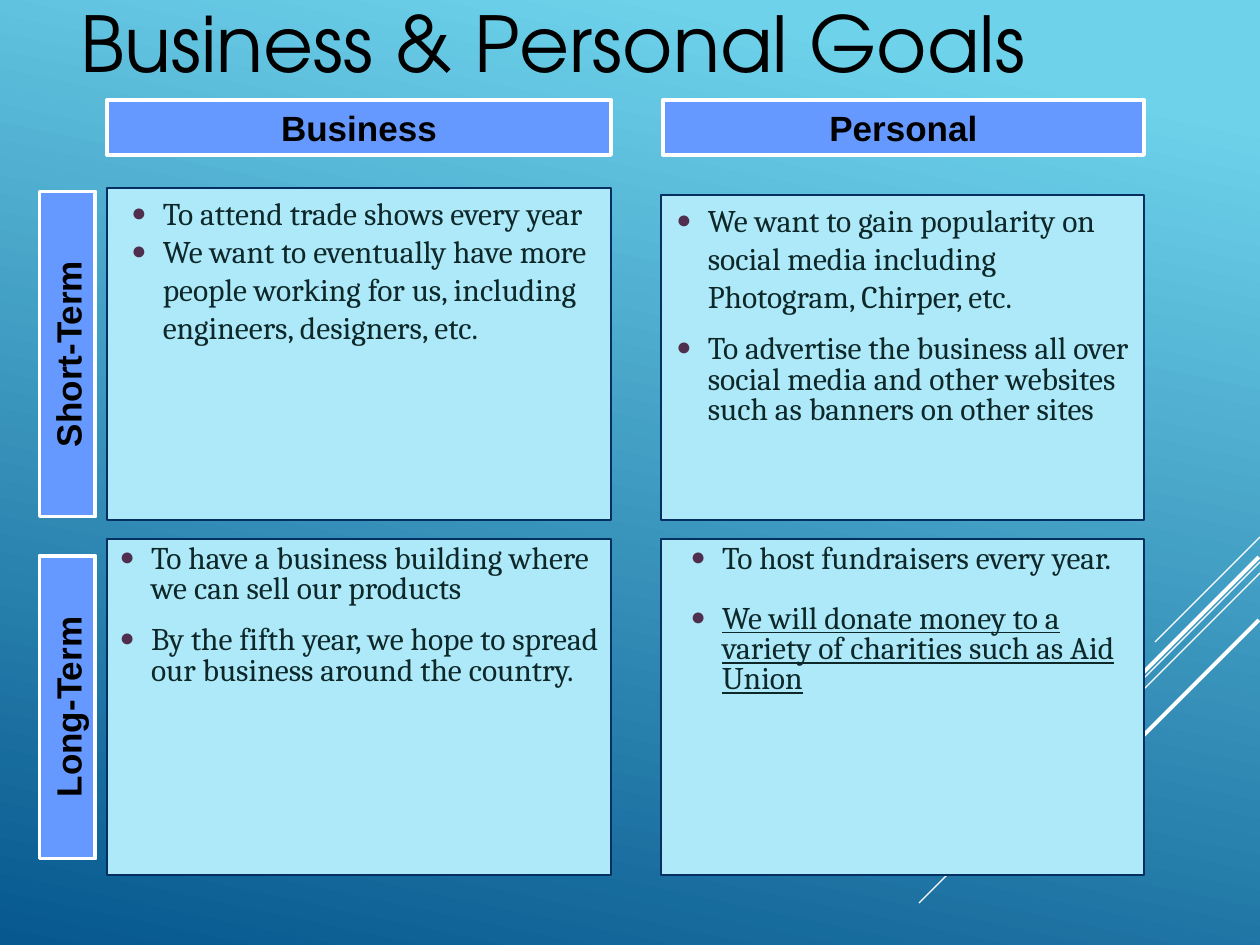
import pptx
import pptx.dml.color
import pptx.enum.shapes
import pptx.enum.text
import pptx.oxml
import pptx.oxml.ns
import pptx.util

PX = 914400 / 126


def color(value):
    return pptx.dml.color.RGBColor.from_string(value)


def write(paragraph, text, size=18, font="Cambria", ink="0E282A", bold=False,
          underline=False, align=pptx.enum.text.PP_ALIGN.LEFT, spacing=1.0, before=0, bullet=False):
    run = paragraph.add_run()
    run.text = text
    run.font.size = pptx.util.Pt(size)
    run.font.name = font
    run.font.color.rgb = color(ink)
    run.font.bold = bold
    run.font.underline = underline
    paragraph.alignment = align
    paragraph.line_spacing = spacing
    paragraph.space_before = pptx.util.Pt(before)
    paragraph.space_after = pptx.util.Pt(0)
    properties = paragraph._p.get_or_add_pPr()
    indent = pptx.util.Inches(0.25) if bullet else 0
    properties.set("marL", str(indent))
    properties.set("indent", str(-indent))
    if bullet:
        namespace = pptx.oxml.ns.nsdecls("a")
        for markup in (f'<a:buClr {namespace}><a:srgbClr val="4F2F4D"/></a:buClr>',
                       f'<a:buSzPct {namespace} val="80000"/>',
                       f'<a:buFont {namespace} typeface="Arial"/>',
                       f'<a:buChar {namespace} char="●"/>'):
            properties.append(pptx.oxml.parse_xml(markup))


def add_box(slide, place, fill, line, width, anchor):
    shape = slide.shapes.add_shape(pptx.enum.shapes.MSO_SHAPE.RECTANGLE,
                                   *(round(value * PX) for value in place))
    shape.shadow.inherit = False
    shape.fill.solid()
    shape.fill.fore_color.rgb = color(fill)
    shape.line.color.rgb = color(line)
    shape.line.width = pptx.util.Pt(width)
    shape.text_frame.word_wrap = True
    shape.text_frame.vertical_anchor = anchor
    return shape


presentation = pptx.Presentation()
presentation.slide_width = round(1260 * PX)
presentation.slide_height = round(945 * PX)
slide = presentation.slides.add_slide(presentation.slide_layouts[5])

background = slide.background.fill
background.gradient()
background.gradient_angle = 258
for stop, (position, value) in zip(background.gradient_stops, [(0.1, "6ED2EB"), (1, "06588E")]):
    stop.position = position
    stop.color.rgb = color(value)

title = slide.shapes.title
title.left, title.top, title.width, title.height = (round(value * PX) for value in (68, -11, 1134, 144))
title.text_frame.word_wrap = True
title.text_frame.vertical_anchor = pptx.enum.text.MSO_ANCHOR.TOP
write(title.text_frame.paragraphs[0], "Business & Personal Goals",
      size=44, font="TeX Gyre Adventor", ink="000000")

for right, top, run, width in [(1260, 537, 105, 0.75), (1260, 562, 341, 0.75), (1260, 573, 217, 0.75),
                               (1259, 557, 198, 2.25), (1259, 620, 144, 2.25)]:
    connector = slide.shapes.add_connector(
        pptx.enum.shapes.MSO_CONNECTOR.STRAIGHT,
        *(round(value * PX) for value in (right, top, right - run, top + run)))
    connector.line.color.rgb = color("FFFFFF")
    connector.line.width = pptx.util.Pt(width)
    connector._element.spPr.append(
        pptx.oxml.parse_xml(f'<a:effectLst {pptx.oxml.ns.nsdecls("a")}/>'))

goals = [
    ((107, 188, 504, 332), [
        ("To attend trade shows every year", {}),
        ("We want to eventually have more people working for us, including engineers, designers, etc.", {})]),
    ((661, 195, 483, 325), [
        ("We want to gain popularity on social media including Photogram, Chirper, etc.", {}),
        ("To advertise the business all over social media and other websites such as banners on other sites",
         {"spacing": 0.8, "before": 12})]),
    ((107, 539, 504, 336), [
        ("To have a business building where we can sell our products", {"spacing": 0.8}),
        ("By the fifth year, we hope to spread our business around the country.",
         {"spacing": 0.8, "before": 12})]),
    ((661, 539, 483, 336), [
        ("To host fundraisers every year.", {"spacing": 0.8}),
        ("We will donate money to a variety of charities such as Aid Union",
         {"spacing": 0.8, "before": 17, "underline": True})]),
]
for place, items in goals:
    box = add_box(slide, place, "ADE9F8", "052F61", 1.5, pptx.enum.text.MSO_ANCHOR.TOP)
    box.text_frame._txBody.bodyPr.set("anchorCtr", "1")
    for index, (text, style) in enumerate(items):
        paragraph = box.text_frame.add_paragraph() if index else box.text_frame.paragraphs[0]
        write(paragraph, text, bullet=True, **style)

headings = [
    ("Business", (107, 100, 504, 55), 0),
    ("Personal", (663, 100, 481, 55), 0),
    ("Short-Term", (-95, 326, 325, 56), 270),
    ("Long-Term", (-84, 679, 303, 56), 270),
]
for text, place, rotation in headings:
    heading = add_box(slide, place, "6699FF", "FFFFFF", 2.25, pptx.enum.text.MSO_ANCHOR.MIDDLE)
    heading.rotation = rotation
    write(heading.text_frame.paragraphs[0], text, size=20, font="Arial", ink="000000",
          bold=True, align=pptx.enum.text.PP_ALIGN.CENTER)

presentation.save("out.pptx")
